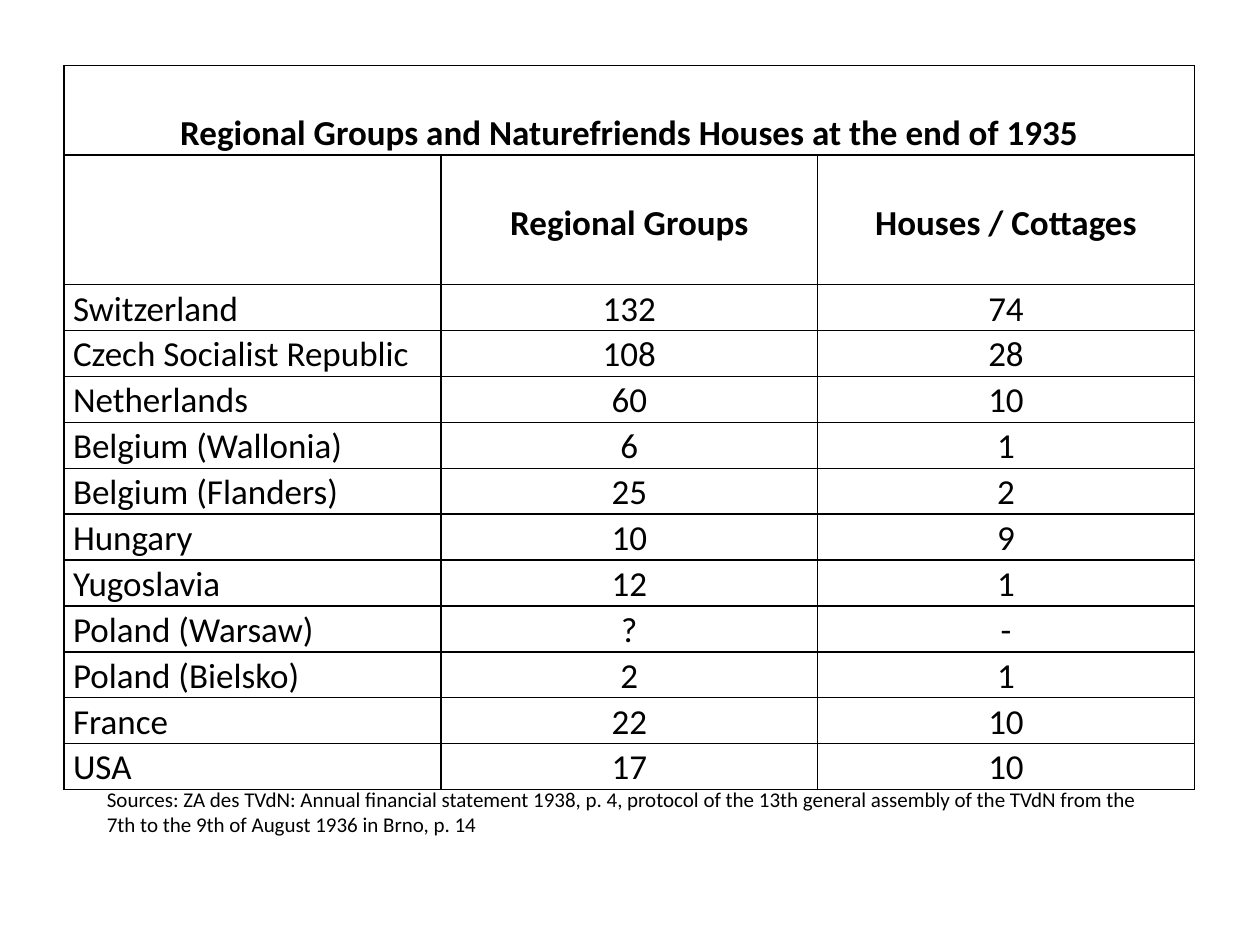
from lxml import etree
from pptx import Presentation
from pptx.dml.color import RGBColor
from pptx.enum import text
from pptx.oxml import ns
from pptx.util import Inches, Pt

BLACK = RGBColor(0, 0, 0)
TITLE = "Regional Groups and Naturefriends Houses at the end of 1935"
NOTE = ("Sources: ZA des TVdN: Annual financial statement 1938, p. 4, protocol of the "
        "13th general assembly of the TVdN from the 7th to the 9th of August 1936 in Brno, p. 14")
ROWS = [
    (TITLE, "", ""),
    ("", "Regional Groups", "Houses / Cottages"),
    ("Switzerland", "132", "74"),
    ("Czech Socialist Republic", "108", "28"),
    ("Netherlands", "60", "10"),
    ("Belgium (Wallonia)", "6", "1"),
    ("Belgium (Flanders)", "25", "2"),
    ("Hungary", "10", "9"),
    ("Yugoslavia", "12", "1"),
    ("Poland (Warsaw)", "?", "-"),
    ("Poland (Bielsko)", "2", "1"),
    ("France", "22", "10"),
    ("USA", "17", "10"),
]


def write(para, words, size, bold=False):
    run = para.add_run()
    run.text = words
    run.font.name = "Calibri"
    run.font.size = Pt(size)
    run.font.bold = bold
    run.font.color.rgb = BLACK


def border(cell):
    props = cell._tc.get_or_add_tcPr()
    for side in ("lnL", "lnR", "lnT", "lnB"):
        line = etree.SubElement(props, ns.qn("a:" + side), w=str(Pt(1)))
        fill = etree.SubElement(line, ns.qn("a:solidFill"))
        etree.SubElement(fill, ns.qn("a:srgbClr"), val=str(BLACK))


deck = Presentation()
deck.slide_width, deck.slide_height = Inches(10), Inches(7.5)
slide = deck.slides.add_slide(deck.slide_layouts[6])

frame = slide.shapes.add_table(len(ROWS), 3, Inches(0.51), Inches(0.52),
                               Inches(8.98), Inches(5.7))
table = frame.table
table.first_row = table.horz_banding = False
for col in table.columns:
    col.width = Inches(2.99)
for r, row in enumerate(ROWS):
    table.rows[r].height = Inches({0: 0.71, 1: 1.03}.get(r, 0.36))
    for c, words in enumerate(row):
        cell = table.cell(r, c)
        border(cell)
        cell.fill.background()
        cell.margin_left = cell.margin_right = Inches(0.07)
        cell.margin_top = cell.margin_bottom = 0
        if r == 0:
            cell.vertical_anchor = text.MSO_ANCHOR.BOTTOM
        elif r == 1:
            cell.vertical_anchor = text.MSO_ANCHOR.MIDDLE
            cell.margin_top = Inches(0.03)
        para = cell.text_frame.paragraphs[0]
        para.line_spacing = 1.07
        if r < 2 or c > 0:
            para.alignment = text.PP_ALIGN.CENTER
        if words:
            write(para, words, 20, r < 2)
table.cell(0, 0).merge(table.cell(0, 2))

note = slide.shapes.add_textbox(Inches(0.75), Inches(6.19), Inches(8.5), Inches(0.5))
note.text_frame.word_wrap = True
note.text_frame.auto_size = text.MSO_AUTO_SIZE.SHAPE_TO_FIT_TEXT
write(note.text_frame.paragraphs[0], NOTE, 12)

deck.save("out.pptx")
